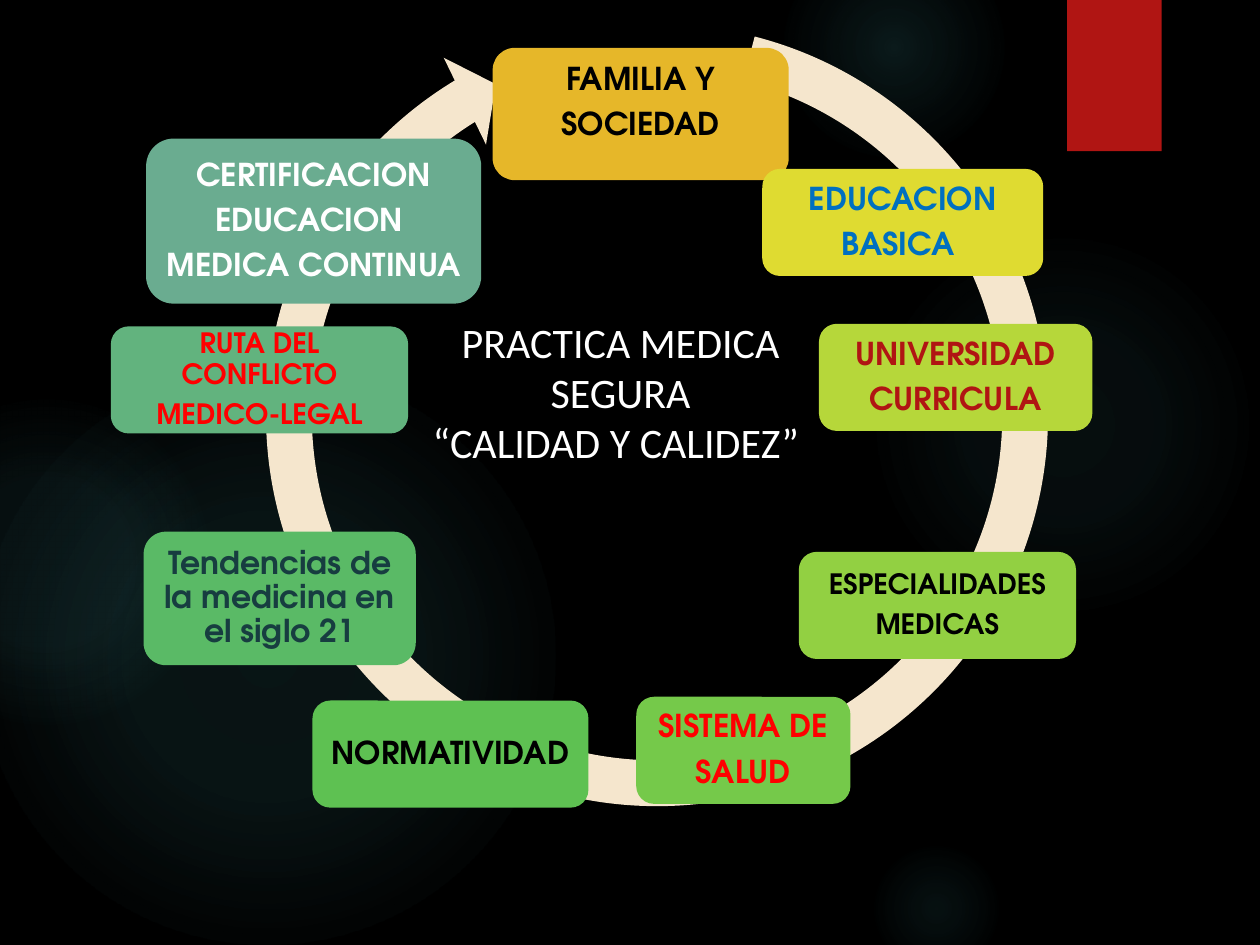
from dataclasses import dataclass

from pptx import Presentation
from pptx.dml.color import RGBColor
from pptx.enum.shapes import MSO_SHAPE as Kind
from pptx.enum.text import MSO_ANCHOR as Anchor, PP_ALIGN as Align
from pptx.oxml import parse_xml
from pptx.oxml.ns import nsdecls, qn
from pptx.util import Inches, Pt


@dataclass(frozen=True)
class Theme:
    back: str = "000000"
    glow: str = "50B9C1"
    tab: str = "B01513"
    ring: str = "F5E6CD"
    white: str = "FFFFFF"
    black: str = "000000"
    red: str = "FF0000"
    blue: str = "0070C0"
    teal: str = "173D40"
    head: str = "Calibri"
    body: str = "TeX Gyre Adventor"
    big: int = 24
    mid: int = 18
    small: int = 16


T = Theme()

# Each card: offset and size in the cycle, fill, text colour, text size, lines
CARDS = [
    ((3.03, 0, 2.35, 1.05), "E6B729", T.black, T.mid,
     ["FAMILIA Y", "SOCIEDAD"]),
    ((5.17, 0.96, 2.23, 0.85), "DFDB31", T.blue, T.mid,
     ["EDUCACION", "BASICA "]),
    ((5.62, 2.19, 2.17, 0.85), "B6D73A", T.tab, T.mid,
     ["UNIVERSIDAD", "CURRICULA"]),
    ((5.46, 4, 2.2, 0.85), "92D042", T.black, T.small,
     ["ESPECIALIDADES", "MEDICAS"]),
    ((4.17, 5.15, 1.7, 0.85), "75C94A", T.red, T.mid,
     ["SISTEMA DE", "SALUD"]),
    ((1.6, 5.18, 2.19, 0.85), "5EC152", T.black, T.mid,
     ["NORMATIVIDAD"]),
    ((0.26, 3.84, 2.16, 1.06), "5ABA66", T.teal, T.mid,
     ["Tendencias de la medicina en el siglo 21"]),
    ((0, 2.21, 2.36, 0.85), "62B37E", T.red, T.small,
     ["RUTA DEL CONFLICTO", "MEDICO-LEGAL"]),
    ((0.28, 0.72, 2.66, 1.31), "6AAC90", T.white, T.mid,
     ["CERTIFICACION", "EDUCACION ", "MEDICA CONTINUA "]),
]

# Each glow: left, top, diameter, then (stop, opacity) in percent
GLOWS = [
    (6.89, 1.83, 3.08, [(0, 7), (36, 6), (69, 0)]),
    (6.22, -0.5, 1.75, [(0, 14), (36, 7), (73, 0)]),
    (6.89, 6.67, 1.08, [(0, 9), (36, 5), (66, 0)]),
    (-0.17, 2.92, 4.58, [(0, 11), (36, 10), (75, 0)]),
    (-0.92, 3.17, 2.58, [(0, 8), (36, 8), (72, 0)]),
]


def rgb(code):
    return RGBColor.from_string(code)


def draw(slide, kind, box, fill):
    shape = slide.shapes.add_shape(kind, *map(Inches, box))
    shape.shadow.inherit = False
    shape.line.fill.background()
    shape.fill.solid()
    shape.fill.fore_color.rgb = rgb(fill)
    return shape


def write(para, text, font, size, color, bold=False):
    run = para.add_run()
    run.text = text
    run.font.name = font
    run.font.size = Pt(size)
    run.font.bold = bold
    run.font.color.rgb = rgb(color)


def glow(slide, box, stops):
    shape = draw(slide, Kind.OVAL, box, T.glow)
    marks = "".join(
        f'<a:gs pos="{pos * 1000}"><a:srgbClr val="{T.glow}">'
        f'<a:alpha val="{alpha * 1000}"/></a:srgbClr></a:gs>'
        for pos, alpha in stops)
    grad = parse_xml(
        f'<a:gradFill {nsdecls("a")}><a:gsLst>{marks}</a:gsLst>'
        '<a:path path="circle"><a:fillToRect l="50000" t="50000" '
        'r="50000" b="50000"/></a:path></a:gradFill>')
    props = shape.element.spPr
    props.replace(props.find(qn("a:solidFill")), grad)


def backdrop(slide):
    slide.background.fill.solid()
    slide.background.fill.fore_color.rgb = rgb(T.back)
    for left, top, size, stops in GLOWS:
        glow(slide, (left, top, size, size), stops)
    draw(slide, Kind.RECTANGLE, (8.47, 0, 0.75, 1.2), T.tab)


def card(slide, box, fill, color, size, lines, anchor):
    shape = draw(slide, Kind.ROUNDED_RECTANGLE, box, fill)
    frame = shape.text_frame
    frame.word_wrap = True
    frame.vertical_anchor = anchor
    frame.margin_left = frame.margin_right = Inches(0.07)
    frame.margin_top = frame.margin_bottom = Inches(0.07)
    for num, text in enumerate(lines):
        para = frame.add_paragraph() if num else frame.paragraphs[0]
        para.alignment = Align.CENTER
        para.line_spacing = 0.9
        para.space_after = Pt(0.35 * size)
        write(para, text, T.body, size, color, True)


def cycle(slide, left, top):
    # Ring behind the cards
    ring = draw(slide, Kind.CIRCULAR_ARROW,
                (left + 1.03, top - 0.39, 6.61, 6.61), T.ring)
    for num, value in enumerate((0.055, 3.307, 143.119, 170.677, 0.058)):
        ring.adjustments[num] = value
    # Cards, clockwise from the top
    for num, ((x, y, wide, high), *look) in enumerate(CARDS):
        anchor = Anchor.MIDDLE if num else Anchor.TOP
        card(slide, (left + x, top + y, wide, high), *look, anchor)


def title(slide, box):
    frame = slide.shapes.add_textbox(*map(Inches, box)).text_frame
    frame.word_wrap = True
    para = frame.paragraphs[0]
    para.alignment = Align.CENTER
    lines = ["PRACTICA MEDICA", "SEGURA", "“CALIDAD Y CALIDEZ” "]
    for num, text in enumerate(lines):
        if num:
            para.add_line_break()
        write(para, text, T.head, T.big, T.white)


def main():
    deck = Presentation()
    deck.slide_width, deck.slide_height = Inches(10), Inches(7.5)
    slide = deck.slides.add_slide(deck.slide_layouts[6])
    backdrop(slide)
    cycle(slide, 0.88, 0.38)
    title(slide, (3.27, 2.46, 3.31, 2.13))
    deck.save("out.pptx")


if __name__ == "__main__":
    main()
